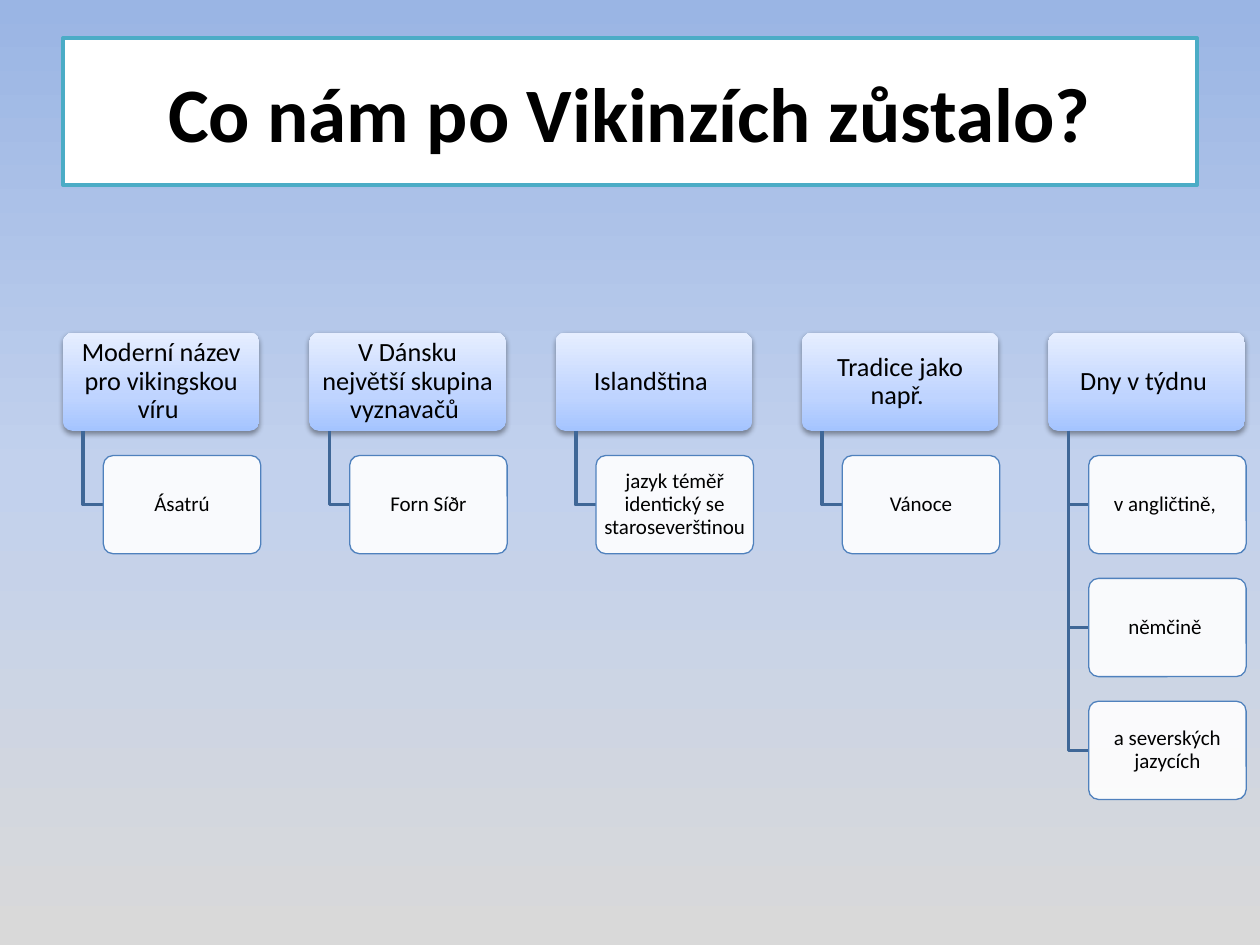
import copy
import pptx
import pptx.dml.color
import pptx.enum.shapes
import pptx.enum.text
import pptx.oxml
import pptx.oxml.ns
import pptx.util
from pptx.util import Inches

TITLE = "Co nám po Vikinzích zůstalo?"
BRANCHES = [
    ("Moderní název pro vikingskou víru ", ["Ásatrú"]),
    ("V Dánsku největší skupina vyznavačů ", ["Forn Síðr"]),
    ("Islandština ", ["jazyk téměř identický se staroseverštinou"]),
    ("Tradice jako např. ", ["Vánoce"]),
    ("Dny v týdnu ", ["v angličtině, ", "němčině ", "a severských jazycích"]),
]

THEME = {
    "font": "Calibri", "text": "000000", "white": "FFFFFF",
    "title_line": "4BACC6", "child_line": "4F81BD", "spine": "3F6797",
    "background": [(0, "9AB5E4"), (50, "C2D1ED"), (100, "D9D9D9")],
    "header": [(0, "A4C4FF"), (35, "BFD4FF"), (100, "E6EEFF")],
    "title_size": 44, "header_size": 15, "child_size": 12,
}

FIRST_LEFT, LAST_LEFT, TOP = 0.5, 8.32, 2.64
HEADER_WIDTH, CHILD_WIDTH, BOX_HEIGHT = 1.56, 1.25, 0.78
CHILD_INDENT, SPINE_INDENT = 0.32, 0.16
COLUMN_PITCH = (LAST_LEFT - FIRST_LEFT) / (len(BRANCHES) - 1)
ROW_PITCH = BOX_HEIGHT * 1.25

SHADOW = (
    '<a:outerShdw %s blurRad="40000" dist="20000" dir="5400000" rotWithShape="0">'
    '<a:srgbClr val="000000"><a:alpha val="38000"/></a:srgbClr></a:outerShdw>'
) % pptx.oxml.ns.nsdecls("a")


def color(name):
    return pptx.dml.color.RGBColor.from_string(THEME[name])


def find(element, tag):
    return element.find(".//" + pptx.oxml.ns.qn(tag))


def set_gradient(fill, element, name, angle):
    fill.gradient()
    fill.gradient_angle = angle
    stop_list = find(element, "a:gsLst")
    stop_list.insert(1, copy.deepcopy(stop_list[0]))
    for stop, (position, value) in zip(fill.gradient_stops, THEME[name]):
        stop.position = position / 100
        stop.color.rgb = pptx.dml.color.RGBColor.from_string(value)


def set_line(shape, name, width):
    shape.line.color.rgb = color(name)
    shape.line.width = pptx.util.Pt(width)


def write(shape, text, size, bold=False):
    frame = shape.text_frame
    frame.word_wrap = True
    frame.auto_size = pptx.enum.text.MSO_AUTO_SIZE.NONE
    frame.vertical_anchor = pptx.enum.text.MSO_ANCHOR.MIDDLE
    para = frame.paragraphs[0]
    para.alignment = pptx.enum.text.PP_ALIGN.CENTER
    span = para.add_run()
    span.text = text
    span.font.name = THEME["font"]
    span.font.size = pptx.util.Pt(THEME[size])
    span.font.bold = bold
    span.font.color.rgb = color("text")


def add_box(page, left, top, width, text, size):
    box = page.shapes.add_shape(
        pptx.enum.shapes.MSO_SHAPE.ROUNDED_RECTANGLE,
        Inches(left), Inches(top), Inches(width), Inches(BOX_HEIGHT))
    box.adjustments[0] = 0.1
    box.shadow.inherit = False
    frame = box.text_frame
    frame.margin_left = frame.margin_right = Inches(0.03)
    frame.margin_top = frame.margin_bottom = Inches(0.02)
    write(box, text, size)
    frame.paragraphs[0].line_spacing = 0.9
    return box


def add_header(page, left, text):
    box = add_box(page, left, TOP, HEADER_WIDTH, text, "header_size")
    set_gradient(box.fill, box.element, "header", 90)
    box.line.fill.background()
    find(box.element, "a:effectLst").append(pptx.oxml.parse_xml(SHADOW))


def add_child(page, left, top, text):
    box = add_box(page, left, top, CHILD_WIDTH, text, "child_size")
    box.fill.solid()
    box.fill.fore_color.rgb = color("white")
    alpha = pptx.oxml.parse_xml(
        '<a:alpha %s val="90000"/>' % pptx.oxml.ns.nsdecls("a"))
    find(box.element, "a:srgbClr").append(alpha)
    set_line(box, "child_line", 0.75)


def add_elbow(page, left, top, right, bottom):
    builder = page.shapes.build_freeform(Inches(left), Inches(top))
    builder.add_line_segments(
        [(Inches(left), Inches(bottom)), (Inches(right), Inches(bottom))],
        close=False)
    elbow = builder.convert_to_shape()
    elbow.fill.background()
    elbow.shadow.inherit = False
    set_line(elbow, "spine", 2)


def add_title(page):
    title = page.shapes.title
    title.left, title.top = Inches(0.5), Inches(0.3)
    title.width, title.height = Inches(9), Inches(1.17)
    title.fill.solid()
    title.fill.fore_color.rgb = color("white")
    set_line(title, "title_line", 2)
    write(title, TITLE, "title_size", bold=True)


def main():
    deck = pptx.Presentation()
    deck.slide_width, deck.slide_height = Inches(10), Inches(7.5)
    page = deck.slides.add_slide(deck.slide_layouts[5])
    set_gradient(page.background.fill, page.element, "background", 270)
    add_title(page)
    for column, (header, children) in enumerate(BRANCHES):
        left = FIRST_LEFT + column * COLUMN_PITCH
        add_header(page, left, header)
        for row, child in enumerate(children, start=1):
            top = TOP + row * ROW_PITCH
            child_left = left + CHILD_INDENT
            add_elbow(page, left + SPINE_INDENT, TOP + BOX_HEIGHT,
                      child_left, top + BOX_HEIGHT / 2)
            add_child(page, child_left, top, child)
    deck.save("out.pptx")


if __name__ == "__main__":
    main()
